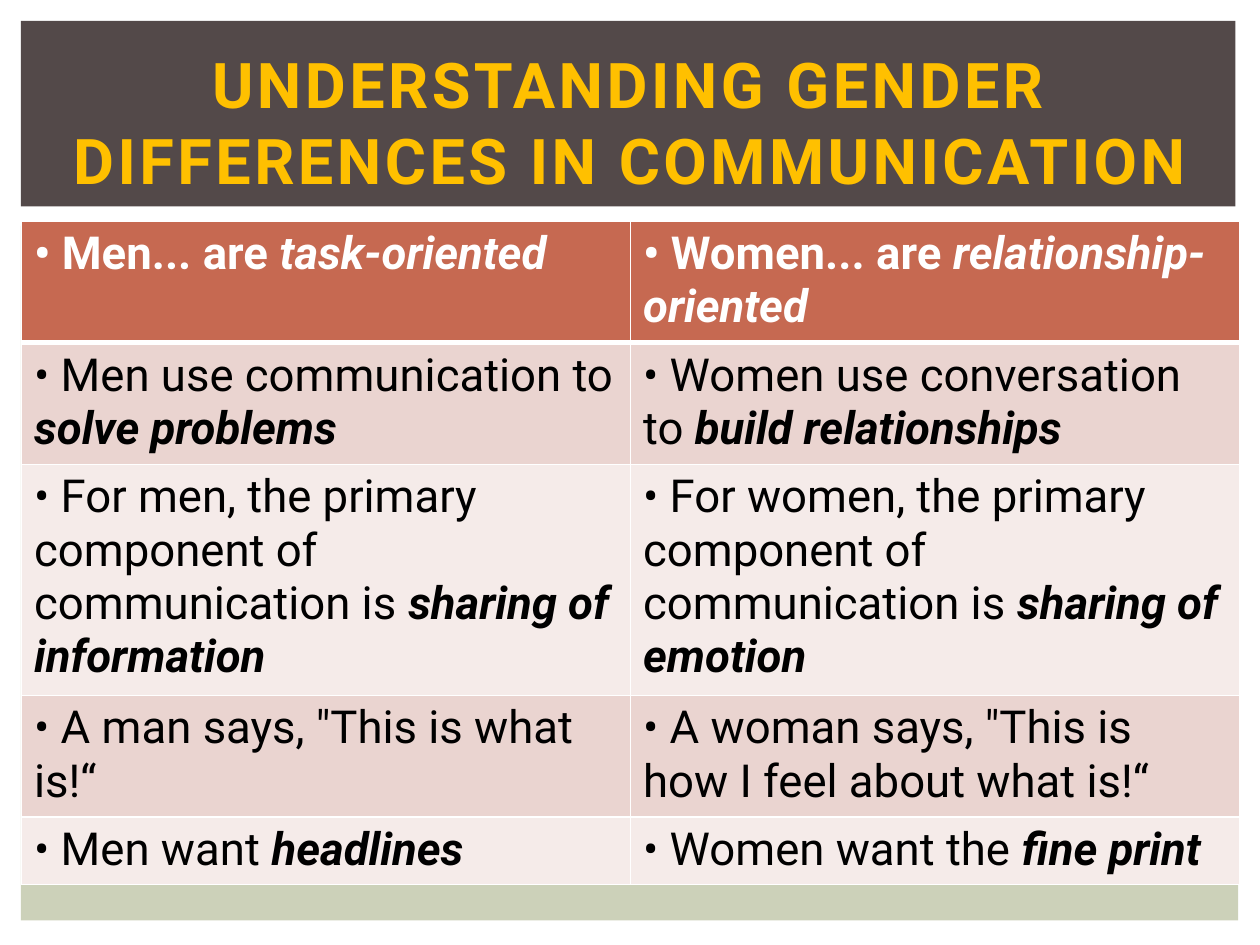
import pptx
import pptx.dml.color
import pptx.enum.shapes
import pptx.enum.text
import pptx.oxml
import pptx.oxml.ns
import pptx.util

Pt = pptx.util.Pt
RGBColor = pptx.dml.color.RGBColor

FONT = "Roboto"
SAGE = RGBColor(0xCC, 0xD1, 0xB9)
BROWN = RGBColor(0x53, 0x49, 0x49)
GOLD = RGBColor(0xFF, 0xC0, 0x00)
RUST = RGBColor(0xC6, 0x69, 0x51)
ROSE = RGBColor(0xEA, 0xD4, 0xD0)
BLUSH = RGBColor(0xF5, 0xEB, 0xE9)
WHITE = RGBColor(0xFF, 0xFF, 0xFF)
BLACK = RGBColor(0x00, 0x00, 0x00)

TITLE = "UNDERSTANDING GENDER DIFFERENCES IN COMMUNICATION"

# Each cell is (plain text, emphasised text); each row starts with its line count.
ROWS = [
    (2, ("• Men... are ", "task-oriented"),
        ("• Women... are ", "relationship-oriented")),
    (2, ("• Men use communication to ", "solve problems"),
        ("• Women use conversation to ", "build relationships")),
    (4, ("• For men, the primary component of communication is ",
         "sharing of information"),
        ("• For women, the primary component of communication is ",
         "sharing of emotion")),
    (2, ("• A man says, \"This is what is!“", ""),
        ("• A woman says, \"This is how I feel about what is!“", "")),
    (1, ("• Men want ", "headlines"),
        ("• Women want the ", "fine print")),
]
LINE_HEIGHT = 30.47
CELL_MARGINS = 7.2


def add_panel(slide, box, color):
    panel = slide.shapes.add_shape(
        pptx.enum.shapes.MSO_SHAPE.RECTANGLE, *map(Pt, box))
    panel.shadow.inherit = False
    panel.fill.solid()
    panel.fill.fore_color.rgb = color
    panel.line.fill.background()


def add_run(paragraph, text, size, color, bold=False, italic=False):
    run = paragraph.add_run()
    run.text = text
    run.font.name = FONT
    run.font.size = Pt(size)
    run.font.color.rgb = color
    run.font.bold = bold
    run.font.italic = italic
    return run


def add_title(slide, box):
    left, top, width, height = box
    add_panel(slide, box, BROWN)
    heading = slide.shapes.add_textbox(
        Pt(left + 18), Pt(top + 16), Pt(width - 34), Pt(height - 23))
    frame = heading.text_frame
    frame.word_wrap = True
    frame.vertical_anchor = pptx.enum.text.MSO_ANCHOR.MIDDLE
    paragraph = frame.paragraphs[0]
    paragraph.alignment = pptx.enum.text.PP_ALIGN.CENTER
    run = add_run(paragraph, TITLE, 36, GOLD, bold=True)
    run.font._element.set("spc", "200")


def set_borders(cell, widths):
    """Draw white borders; widths maps an edge letter (L, R, T, B) to points."""
    properties = cell._tc.get_or_add_tcPr()
    for position, (edge, width) in enumerate(widths.items()):
        border = pptx.oxml.parse_xml(
            f'<a:ln{edge} {pptx.oxml.ns.nsdecls("a")} w="{Pt(width)}">'
            f'<a:solidFill><a:srgbClr val="{WHITE}"/></a:solidFill></a:ln{edge}>')
        properties.insert(position, border)


def fill_cell(cell, content, row):
    header = row == 0
    cell.fill.solid()
    cell.fill.fore_color.rgb = RUST if header else (BLUSH, ROSE)[row % 2]
    set_borders(cell, {"L": 1, "R": 1, "T": 3 if row == 1 else 1,
                       "B": 3 if header else 1})
    plain, emphasis = content
    color = WHITE if header else BLACK
    paragraph = cell.text_frame.paragraphs[0]
    add_run(paragraph, plain, 26, color, bold=header)
    if emphasis:
        add_run(paragraph, emphasis, 26, color, bold=True, italic=True)


def add_comparison(slide, left, top, width):
    heights = [lines * LINE_HEIGHT + CELL_MARGINS for lines, *_ in ROWS]
    table = slide.shapes.add_table(
        len(ROWS), 2, Pt(left), Pt(top), Pt(width), Pt(sum(heights))).table
    for column in table.columns:
        column.width = Pt(width / 2)
    for row, (_, *contents) in enumerate(ROWS):
        table.rows[row].height = Pt(heights[row])
        for column, content in enumerate(contents):
            fill_cell(table.cell(row, column), content, row)


def main():
    deck = pptx.Presentation()
    deck.slide_width, deck.slide_height = Pt(720), Pt(540)
    slide = deck.slides.add_slide(deck.slide_layouts[6])
    add_panel(slide, (12, 129, 695.5, 397), SAGE)
    add_title(slide, (12, 12, 694, 106))
    add_comparison(slide, 12.3, 126.2, 696)
    deck.save("out.pptx")


if __name__ == "__main__":
    main()
